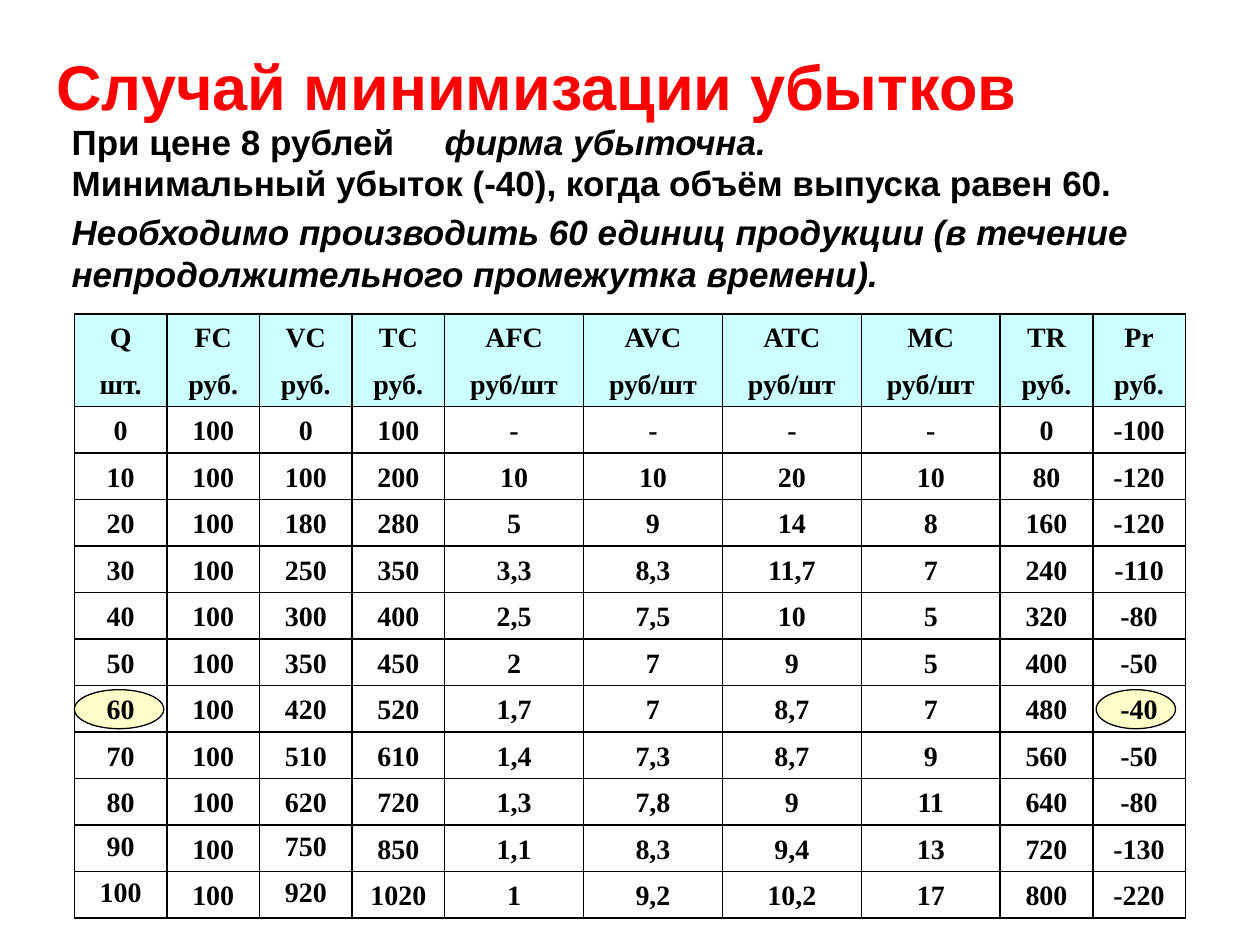
"""Builds the slide on loss minimisation with its table of costs."""
import itertools

import pptx
import pptx.dml.color
import pptx.enum.shapes
import pptx.enum.text
import pptx.oxml.ns
import pptx.util
from lxml import etree

ANCHOR = pptx.enum.text.MSO_ANCHOR
LEFT, TOP, WIDTH, HEIGHT = 0.59, 2.49, 8.82, 4.8
SPANS = [2] * 4 + [3] * 4 + [2] * 2
UNIT = WIDTH / sum(SPANS)
TEXT_LEFT = 0.47
ROWS = [line.split() for line in """
Q FC VC TC AFC AVC ATC MC TR Pr
шт. руб. руб. руб. руб/шт руб/шт руб/шт руб/шт руб. руб.
0 100 0 100 - - - - 0 -100
10 100 100 200 10 10 20 10 80 -120
20 100 180 280 5 9 14 8 160 -120
30 100 250 350 3,3 8,3 11,7 7 240 -110
40 100 300 400 2,5 7,5 10 5 320 -80
50 100 350 450 2 7 9 5 400 -50
60 100 420 520 1,7 7 8,7 7 480 -40
70 100 510 610 1,4 7,3 8,7 9 560 -50
80 100 620 720 1,3 7,8 9 11 640 -80
90 100 750 850 1,1 8,3 9,4 13 720 -130
100 100 920 1020 1 9,2 10,2 17 800 -220
""".strip().splitlines()]
ROW_HEIGHT = HEIGHT / len(ROWS)
HEADER_ROWS = 2
BEST_ROW = 8
TOP_ALIGNED = set(itertools.product((11, 12), (0, 2)))
TITLE = {"name": "Arial", "size": pptx.util.Pt(36), "bold": True}
BODY = {"name": "Arial", "size": pptx.util.Pt(20), "bold": True}
STRESSED = {**BODY, "italic": True}
CELL = {"name": "Times New Roman", "size": pptx.util.Pt(16), "bold": True}


def colour(code):
    """Turn a hex string into a colour."""
    return pptx.dml.color.RGBColor.from_string(code)


def inches(*lengths):
    """Turn lengths in inches into slide units."""
    return [pptx.util.Inches(length) for length in lengths]


def write(para, text, style, code="000000"):
    """Put one formatted span of text into a paragraph."""
    span = para.add_run()
    span.text = text
    for name, value in style.items():
        setattr(span.font, name, value)
    span.font.color.rgb = colour(code)


def add_text(page, area, text, style, code="000000", grow=True):
    """Add a wrapped text box centred vertically."""
    frame = page.shapes.add_textbox(*inches(*area)).text_frame
    frame.word_wrap = True
    frame.vertical_anchor = ANCHOR.MIDDLE
    if grow:
        frame.auto_size = pptx.enum.text.MSO_AUTO_SIZE.SHAPE_TO_FIT_TEXT
    write(frame.paragraphs[0], text, style, code)


def add_highlight(page, left, width, height=0.31):
    """Add an oval centred on the row with the smallest loss."""
    top = TOP + (BEST_ROW + 0.5) * ROW_HEIGHT - height / 2
    oval = page.shapes.add_shape(
        pptx.enum.shapes.MSO_SHAPE.OVAL, *inches(left, top, width, height))
    oval.shadow.inherit = False
    oval.fill.solid()
    oval.fill.fore_color.rgb = colour("FFFFCC")
    oval.line.color.rgb = colour("000000")
    oval.line.width = pptx.util.Pt(0.75)


def add_borders(cell, open_sides):
    """Draw thin black borders on a cell except on its open sides."""
    qn = pptx.oxml.ns.qn
    properties = cell._tc.get_or_add_tcPr()
    for side in "LRTB":
        line = etree.SubElement(properties, qn("a:ln" + side), w=str(pptx.util.Pt(1)))
        if side in open_sides:
            etree.SubElement(line, qn("a:noFill"))
        else:
            fill = etree.SubElement(line, qn("a:solidFill"))
            etree.SubElement(fill, qn("a:srgbClr"), val="000000")


def fill_cell(cell, row, column):
    """Format one table cell and write its value."""
    add_borders(cell, {0: "B", 1: "T"}.get(row, ""))
    if row < HEADER_ROWS:
        cell.fill.solid()
        cell.fill.fore_color.rgb = colour("CCFFFF")
    else:
        cell.fill.background()
    top_aligned = (row, column) in TOP_ALIGNED
    cell.vertical_anchor = ANCHOR.TOP if top_aligned else ANCHOR.BOTTOM
    para = cell.text_frame.paragraphs[0]
    para.alignment = pptx.enum.text.PP_ALIGN.CENTER
    write(para, ROWS[row][column], CELL)


def add_cost_table(page):
    """Add the table of costs, revenue and profit."""
    table = page.shapes.add_table(
        len(ROWS), len(SPANS), *inches(LEFT, TOP, WIDTH, HEIGHT)).table
    table.first_row = table.horz_banding = False
    for column, span in zip(table.columns, SPANS):
        column.width = pptx.util.Inches(span * UNIT)
    for row, column in itertools.product(range(len(ROWS)), range(len(SPANS))):
        fill_cell(table.cell(row, column), row, column)


def main():
    """Build and save the slide."""
    deck = pptx.Presentation()
    deck.slide_width, deck.slide_height = inches(10, 7.5)
    page = deck.slides.add_slide(deck.slide_layouts[6])
    add_text(page, (0.35, 0.28, 9, 0.79), "Случай минимизации убытков",
             TITLE, "FF0000", grow=False)
    add_text(page, (3.43, 0.91, 4.49, 0.43), "фирма убыточна.", STRESSED)
    full_width = 10 - TEXT_LEFT
    add_text(page, (TEXT_LEFT, 1.23, full_width, 0.43),
             "Минимальный убыток (-40), когда объём выпуска равен 60.", BODY)
    add_text(page, (TEXT_LEFT, 1.62, full_width, 0.77),
             "Необходимо производить 60 единиц продукции "
             "(в течение непродолжительного промежутка времени).", STRESSED)
    add_highlight(page, LEFT, 0.71)
    add_highlight(page, 8.7, 0.63)
    add_cost_table(page)
    add_text(page, (TEXT_LEFT, 0.91, 3.35, 0.43), "При цене 8 рублей", BODY)
    deck.save("out.pptx")


if __name__ == "__main__":
    main()
